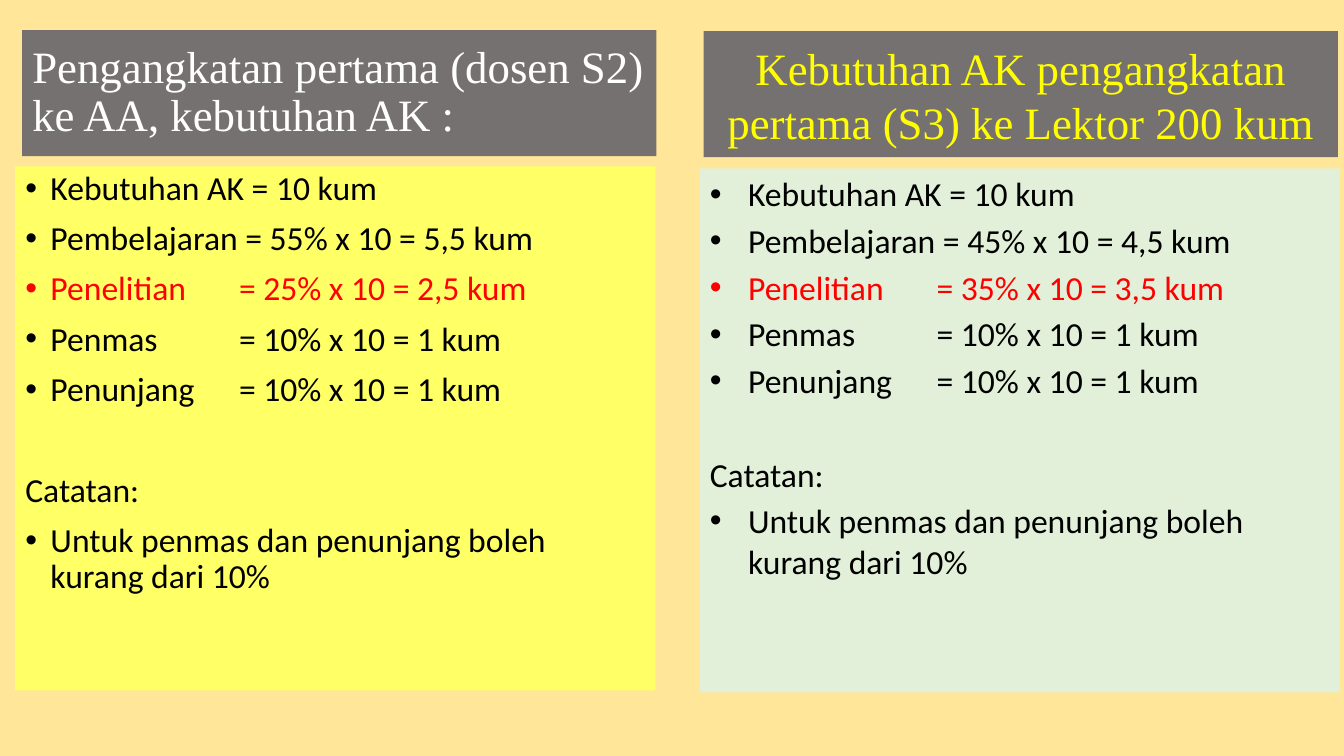
import pptx
import pptx.dml.color
import pptx.enum.shapes
import pptx.enum.text
import pptx.oxml
import pptx.oxml.ns
import pptx.util

RGBColor = pptx.dml.color.RGBColor
Align = pptx.enum.text.PP_ALIGN
Anchor = pptx.enum.text.MSO_ANCHOR

SAND = RGBColor(0xFF, 0xE6, 0x99)
GREY = RGBColor(0x76, 0x71, 0x71)
LEMON = RGBColor(0xFF, 0xFF, 0x66)
MINT = RGBColor(0xE2, 0xF0, 0xD9)
WHITE = RGBColor(0xFF, 0xFF, 0xFF)
BLACK = RGBColor(0, 0, 0)
RED = RGBColor(0xFF, 0, 0)
YELLOW = RGBColor(0xFF, 0xFF, 0)

HEADING_SIZE = (47.19, 16.67)
LIST_SIZE = (47.64, 69.33)
VALUE_OFFSET = 1.87  # inches from the list text to the equals sign
NOTE = "Catatan:"


def credit_lines(teaching, research):
    return [
        "Kebutuhan AK = 10 kum",
        f"Pembelajaran = {teaching} kum",
        f"Penelitian\t= {research} kum",
        "Penmas\t= 10% x 10 = 1 kum",
        "Penunjang\t= 10% x 10 = 1 kum",
        NOTE,
        "Untuk penmas dan penunjang boleh kurang dari 10%",
    ]


class Page:
    """Holds the slide and its text styles; lengths are percent of the slide size."""

    heading_font = {"name": "Times New Roman", "size": pptx.util.Pt(32)}
    list_font = {"name": "Calibri", "size": pptx.util.Pt(24)}

    def __init__(self, deck, layout, background):
        self.deck = deck
        self.slide = deck.slides.add_slide(deck.slide_layouts[layout])
        self.slide.background.fill.solid()
        self.slide.background.fill.fore_color.rgb = background

    def apply(self, target, values):
        for name, value in values.items():
            setattr(target, name, value)

    def place(self, box, corner, size, fill):
        wide, high = self.deck.slide_width, self.deck.slide_height
        self.apply(box, {
            "left": round(wide * corner[0] / 100),
            "top": round(high * corner[1] / 100),
            "width": round(wide * size[0] / 100),
            "height": round(high * size[1] / 100),
        })
        box.fill.solid()
        box.fill.fore_color.rgb = fill

    def add_text(self, para, text, font, color, layout):
        span = para.add_run()
        span.text = text
        self.apply(span.font, font)
        span.font.color.rgb = color
        self.apply(para, layout)

    def heading(self, box, corner, text, color, alignment, line_spacing):
        self.place(box, corner, HEADING_SIZE, GREY)
        frame = box.text_frame
        self.apply(frame, {"word_wrap": True, "vertical_anchor": Anchor.MIDDLE,
                           "auto_size": pptx.enum.text.MSO_AUTO_SIZE.NONE})
        self.add_text(frame.paragraphs[0], text, self.heading_font, color,
                      {"alignment": alignment, "line_spacing": line_spacing})

    def rectangle(self):
        box = self.slide.shapes.add_shape(
            pptx.enum.shapes.MSO_SHAPE.RECTANGLE, 0, 0, 0, 0)
        box.shadow.inherit = False
        box.line.fill.background()
        return box

    def set_bullet(self, para, indent, bulleted):
        """Set hanging indent, bullet and the tab stop of the values."""
        margin = pptx.util.Inches(indent) if bulleted else 0
        props = para._p.get_or_add_pPr()
        props.set("marL", str(margin))
        props.set("indent", str(-margin))
        space = pptx.oxml.ns.nsdecls("a")
        stop = pptx.util.Inches(indent + VALUE_OFFSET)
        bullet = (f'<a:buChar {space} char="•"/>' if bulleted
                  else f"<a:buNone {space}/>")
        tabs = f'<a:tabLst {space}><a:tab pos="{stop}" algn="l"/></a:tabLst>'
        for xml in (bullet, tabs):
            props.append(pptx.oxml.parse_xml(xml))

    def bullets(self, box, corner, fill, lines, indent, line_spacing, gap, note_gap):
        self.place(box, corner, LIST_SIZE, fill)
        frame = box.text_frame
        self.apply(frame, {"word_wrap": True, "vertical_anchor": Anchor.TOP,
                           "auto_size": pptx.enum.text.MSO_AUTO_SIZE.NONE})
        for index, line in enumerate(lines):
            para = frame.add_paragraph() if index else frame.paragraphs[0]
            self.set_bullet(para, indent, line != NOTE)
            before = 0 if index == 0 else note_gap if line == NOTE else gap
            color = RED if line.startswith("Penelitian") else BLACK
            self.add_text(para, line, self.list_font, color, {
                "alignment": Align.LEFT, "line_spacing": line_spacing,
                "space_before": pptx.util.Pt(before)})


def main():
    deck = pptx.Presentation()
    deck.slide_width = pptx.util.Inches(13.33)
    deck.slide_height = pptx.util.Inches(7.5)
    page = Page(deck, 3, SAND)
    title, first_list, second_list = page.slide.placeholders

    page.heading(title, (1.65, 4), "Pengangkatan pertama (dosen S2) ke AA, kebutuhan AK :",
                 WHITE, Align.LEFT, 0.9)
    page.bullets(first_list, (1.13, 22), LEMON,
                 credit_lines("55% x 10 = 5,5", "25% x 10 = 2,5"),
                 indent=0.25, line_spacing=0.9, gap=10, note_gap=46)
    page.heading(page.rectangle(), (52.36, 4.13),
                 "Kebutuhan AK pengangkatan pertama (S3) ke Lektor 200 kum",
                 YELLOW, Align.CENTER, 1.0)
    page.bullets(second_list, (52.06, 22.27), MINT,
                 credit_lines("45% x 10 = 4,5", "35% x 10 = 3,5"),
                 indent=0.38, line_spacing=1.0, gap=4.5, note_gap=38)
    deck.save("out.pptx")


if __name__ == "__main__":
    main()
